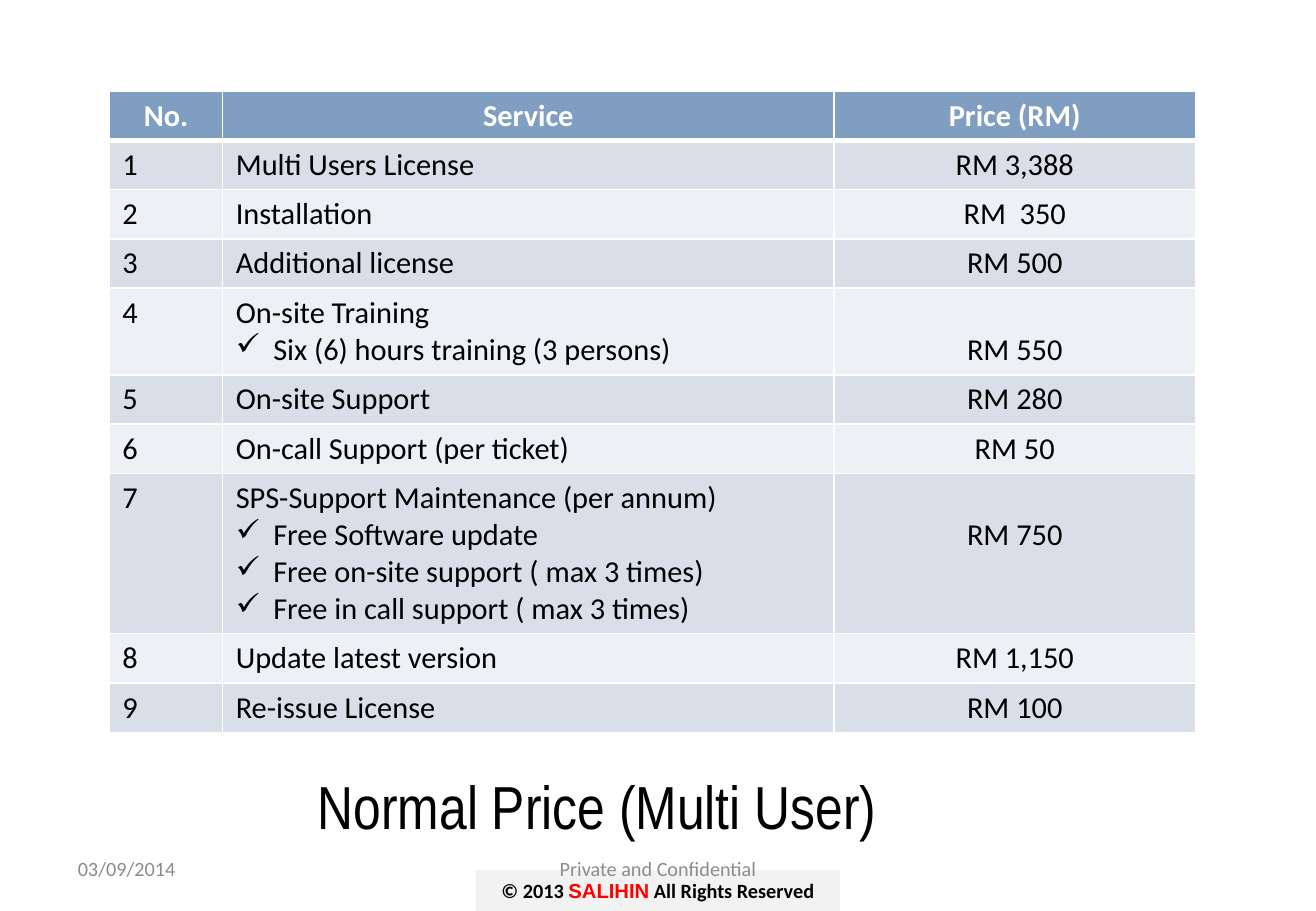
from typing import NamedTuple

from lxml.etree import SubElement
from pptx import Presentation
from pptx.dml.color import RGBColor
from pptx.enum.shapes import MSO_SHAPE as Shape
from pptx.enum.text import MSO_ANCHOR as Anchor, MSO_AUTO_SIZE as AutoSize, PP_ALIGN as Align
from pptx.oxml.ns import qn
from pptx.util import Pt

PX = 7620  # EMU in one px, 120 px to the inch
COLORS = {
    "header": "809EC2",
    "odd": "D8DFE9",
    "even": "EDF0F4",
    "bar": "F2F2F2",
    "white": "FFFFFF",
    "black": "000000",
    "grey": "8C8C8C",
    "red": "FF0000",
}
COLUMN_WIDTHS = (112, 604, 357)
LINE_HEIGHT = 36
MARGIN_X, MARGIN_Y = 13, 6
BULLET_INDENT = 37


class Box(NamedTuple):
    left: int
    top: int
    width: int
    height: int

    def emu(self) -> list[int]:
        return [px * PX for px in self]


class Service(NamedTuple):
    name: str
    price: str
    details: tuple[str, ...] = ()


class Footer(NamedTuple):
    text: str
    box: Box
    align: Align


class Span(NamedTuple):
    text: str
    font: str
    color: str


SERVICES = (
    Service("Multi Users License", "RM 3,388"),
    Service("Installation", "RM  350"),
    Service("Additional license", "RM 500"),
    Service("On-site Training", "RM 550", ("Six (6) hours training (3 persons)",)),
    Service("On-site Support", "RM 280"),
    Service("On-call Support (per ticket)", "RM 50"),
    Service(
        "SPS-Support Maintenance (per annum)",
        "RM 750",
        (
            "Free Software update",
            "Free on-site support ( max 3 times)",
            "Free in call support ( max 3 times)",
        ),
    ),
    Service("Update latest version", "RM 1,150"),
    Service("Re-issue License", "RM 100"),
)
FOOTERS = (
    Footer("Private and Confidential", Box(444, 834, 412, 48), Align.CENTER),
    Footer("03/09/2014", Box(65, 834, 304, 48), Align.LEFT),
)
COPYRIGHT = (
    Span("© 2013 ", "Calibri", "black"),
    Span("SALIHIN", "Arial", "red"),
    Span(" All Rights Reserved", "Calibri", "black"),
)


def rgb(name: str) -> RGBColor:
    return RGBColor.from_string(COLORS[name])


def set_font(font, size: int, color: str, name: str = "Calibri", bold: bool = False) -> None:
    font.size, font.name, font.bold = Pt(size), name, bold
    font.color.rgb = rgb(color)


def add_check_bullet(para) -> None:
    props = para._p.get_or_add_pPr()
    props.set("marL", str(BULLET_INDENT * PX))
    props.set("indent", str(-BULLET_INDENT * PX))
    SubElement(props, qn("a:buChar"), char="✓")


def add_borders(cell, top: int, bottom: int) -> None:
    """Draw white cell borders; top and bottom widths are in points."""
    props = cell._tc.get_or_add_tcPr()
    for side, width in (("L", 1), ("R", 1), ("T", top), ("B", bottom)):
        line = SubElement(props, qn(f"a:ln{side}"), w=str(Pt(width)))
        fill = SubElement(line, qn("a:solidFill"))
        SubElement(fill, qn("a:srgbClr"), val=COLORS["white"])


def fill_cell(cell, lines: tuple[str, ...], row: int, align: Align, skipped: int = 0) -> None:
    """Write a cell: first line plain, the others checked, below skipped lines."""
    is_header = row == 0
    add_borders(cell, top=3 if row == 1 else 1, bottom=3 if is_header else 1)
    cell.fill.solid()
    cell.fill.fore_color.rgb = rgb("header" if is_header else "odd" if row % 2 else "even")
    cell.margin_left = cell.margin_right = MARGIN_X * PX
    cell.margin_top = (MARGIN_Y + skipped * (LINE_HEIGHT + 1)) * PX
    cell.margin_bottom = MARGIN_Y * PX
    frame = cell.text_frame
    for index, text in enumerate(lines):
        para = frame.add_paragraph() if index else frame.paragraphs[0]
        para.text, para.alignment = text, align
        if index:
            add_check_bullet(para)
        set_font(para.font, 18, "white" if is_header else "black", bold=is_header)


def add_price_table(page) -> None:
    box = Box(108, 90, sum(COLUMN_WIDTHS), 628)
    table = page.shapes.add_table(len(SERVICES) + 1, len(COLUMN_WIDTHS), *box.emu()).table
    for column, width in zip(table.columns, COLUMN_WIDTHS):
        column.width = width * PX
    table.rows[0].height = (2 * MARGIN_Y + LINE_HEIGHT) * PX
    for column, heading in enumerate(("No.", "Service", "Price (RM)")):
        fill_cell(table.cell(0, column), (heading,), 0, Align.CENTER)
    for row, service in enumerate(SERVICES, start=1):
        lines = (service.name, *service.details)
        table.rows[row].height = (2 * MARGIN_Y + len(lines) * LINE_HEIGHT) * PX
        fill_cell(table.cell(row, 0), (str(row),), row, Align.LEFT)
        fill_cell(table.cell(row, 1), lines, row, Align.LEFT)
        skipped = 1 if service.details else 0
        fill_cell(table.cell(row, 2), (service.price,), row, Align.CENTER, skipped)


def add_copyright_bar(page) -> None:
    bar = page.shapes.add_shape(Shape.RECTANGLE, *Box(470, 860, 360, 40).emu())
    bar.shadow.inherit = False
    bar.fill.solid()
    bar.fill.fore_color.rgb = rgb("bar")
    bar.line.fill.background()
    bar.text_frame.vertical_anchor = Anchor.MIDDLE
    para = bar.text_frame.paragraphs[0]
    para.alignment = Align.CENTER
    for part in COPYRIGHT:
        span = para.add_run()
        span.text = part.text
        set_font(span.font, 12, part.color, part.font, bold=True)


def format_title(page) -> None:
    title = page.shapes.title
    title.left, title.top, title.width, title.height = Box(108, 700, 964, 190).emu()
    frame = title.text_frame
    frame.text = "Normal Price (Multi User)"
    frame.auto_size, frame.vertical_anchor = AutoSize.NONE, Anchor.MIDDLE
    para = frame.paragraphs[0]
    para.alignment = Align.CENTER
    set_font(para.font, 36, "black", "Arial Narrow")


def add_footer(page, footer: Footer) -> None:
    frame = page.shapes.add_textbox(*footer.box.emu()).text_frame
    frame.word_wrap, frame.vertical_anchor = True, Anchor.MIDDLE
    para = frame.paragraphs[0]
    para.text, para.alignment = footer.text, footer.align
    set_font(para.font, 12, "grey")


def main() -> None:
    deck = Presentation()
    deck.slide_width, deck.slide_height = 1300 * PX, 900 * PX
    page = deck.slides.add_slide(deck.slide_layouts[5])
    add_copyright_bar(page)
    format_title(page)
    add_price_table(page)
    for footer in FOOTERS:
        add_footer(page, footer)
    deck.save("out.pptx")


if __name__ == "__main__":
    main()
